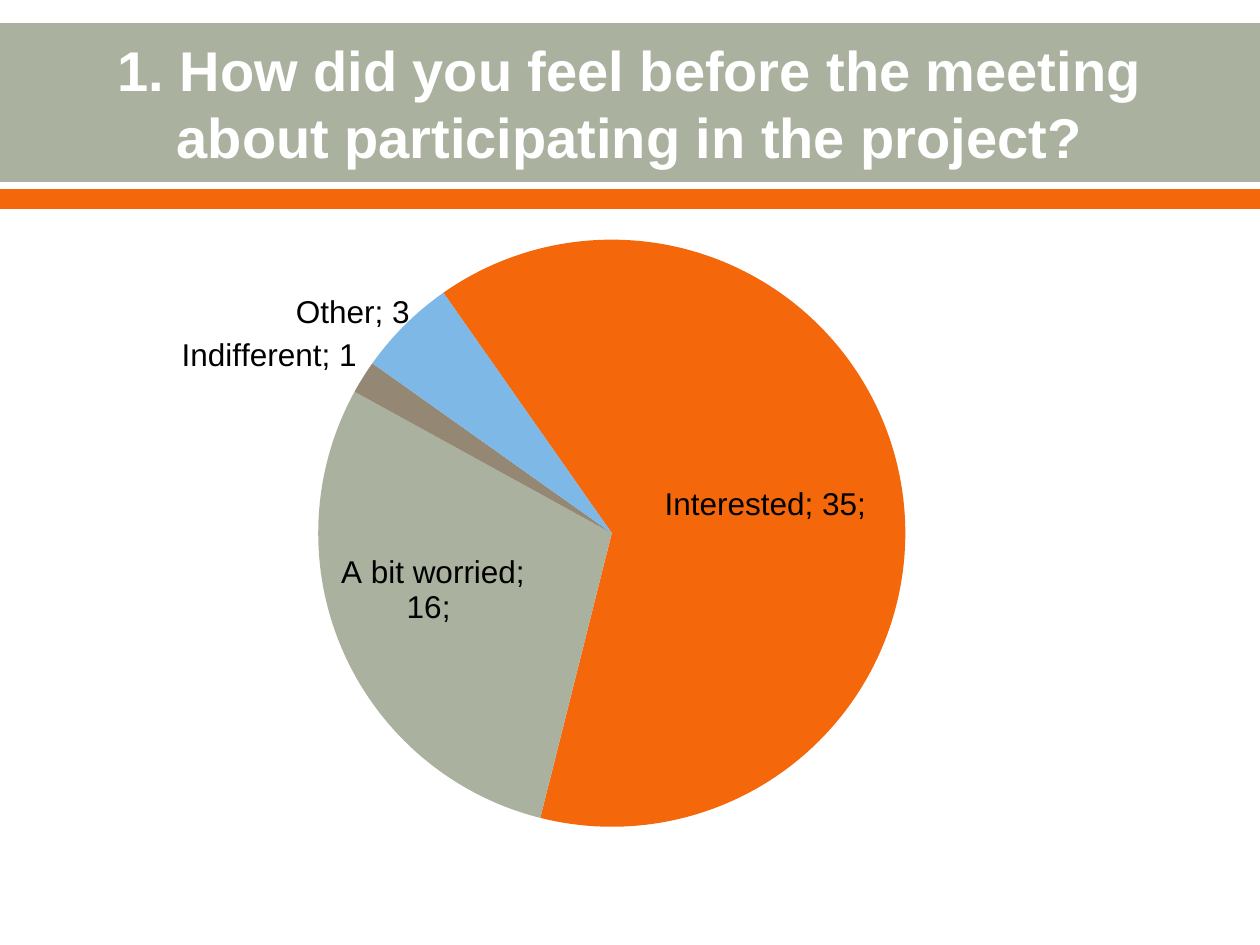
from lxml import etree
from pptx import Presentation
from pptx.chart.data import CategoryChartData
from pptx.dml.color import RGBColor
from pptx.enum.chart import XL_CHART_TYPE, XL_LABEL_POSITION
from pptx.enum.shapes import MSO_SHAPE
from pptx.enum.text import MSO_ANCHOR, PP_ALIGN
from pptx.oxml.ns import qn
from pptx.util import Emu, Pt

RECTANGLE = MSO_SHAPE.RECTANGLE
PIE = XL_CHART_TYPE.PIE
INSIDE, OUTSIDE = XL_LABEL_POSITION.CENTER, XL_LABEL_POSITION.OUTSIDE_END
CENTER, MIDDLE = PP_ALIGN.CENTER, MSO_ANCHOR.MIDDLE

PX = 914400 / 126
FONT = "Arial"
COLORS = {"sage": "ABB19F", "orange": "F4680B", "brown": "948774",
          "blue": "7EB8E7", "white": "FFFFFF", "black": "000000"}
TITLE = "1. How did you feel before the meeting about participating in the project?"
# category, answers, colour, label, label position, label shift in px
ANSWERS = [
    ("Interested", 35, "orange", "Interested; 35; ", INSIDE, (14, -2)),
    ("A bit worried", 16, "sage", "A bit worried; 16; ", INSIDE, (-44, -2)),
    ("Indifferent", 1, "brown", "Indifferent; 1", OUTSIDE, (0, 0)),
    ("Other", 3, "blue", "Other; 3", OUTSIDE, (10, 10)),
]


def emu(*lengths):
    return [Emu(round(length * PX)) for length in lengths]


def rgb(name):
    return RGBColor.from_string(COLORS[name])


def style_font(font, size, color, bold=False):
    font.name, font.size, font.bold = FONT, Pt(size), bold
    font.color.rgb = rgb(color)


def add_band(page, box, color):
    band = page.shapes.add_shape(RECTANGLE, *emu(*box))
    band.shadow.inherit = False
    band.fill.solid()
    band.fill.fore_color.rgb = rgb(color)
    band.line.fill.background()


def add_header(page, box):
    left, top, width, height = box
    add_band(page, (left, top, width, 159), "sage")
    add_band(page, (left, top + height - 20, width, 20), "orange")

    # Title, raised above the bands
    title = page.shapes.title
    page.shapes._spTree.append(title._element)
    title.left, title.top, title.width, title.height = emu(
        left + 63, top + 3, width - 126, 154)
    frame = title.text_frame
    frame.word_wrap = True
    frame.vertical_anchor = MIDDLE
    para = frame.paragraphs[0]
    para.alignment = CENTER
    span = para.add_run()
    span.text = TITLE
    style_font(span.font, 32, "white", bold=True)


def add_layout(parent, index, **settings):
    """Give a chart part a manual layout, in fractions of the chart."""
    for old in parent.findall(qn("c:layout")):
        parent.remove(old)
    layout = etree.Element(qn("c:layout"))
    manual = etree.SubElement(layout, qn("c:manualLayout"))
    for name, value in settings.items():
        etree.SubElement(manual, qn("c:" + name)).set("val", str(value))
    parent.insert(index, layout)


def add_answer_pie(page, box):
    width, height = box[2:]
    data = CategoryChartData()
    data.categories = [answer[0] for answer in ANSWERS]
    data.add_series("Series 1", [answer[1] for answer in ANSWERS])
    chart = page.shapes.add_chart(PIE, *emu(*box), data).chart
    chart.has_title = chart.has_legend = False
    style_font(chart.font, 18, "black")

    # Pie place and rotation
    plot = chart.plots[0]
    plot.vary_by_categories = True
    pie = plot._element
    etree.SubElement(pie, qn("c:firstSliceAng")).set("val", "325")
    add_layout(pie.getparent(), 0, layoutTarget="inner", xMode="edge",
               yMode="edge", x=0.225, y=0.03, w=0.518, h=0.941)

    # Slices and their labels
    series = plot.series[0]
    for index, (_, _, color, text, position, shift) in enumerate(ANSWERS):
        point = series.points[index]
        point.format.fill.solid()
        point.format.fill.fore_color.rgb = rgb(color)
        label = point.data_label
        span = label.text_frame.paragraphs[0].add_run()
        span.text = text
        style_font(span.font, 18, "black")
        label.position = position
        for flag in ("c:showCatName", "c:showPercent"):
            label._dLbl.find(qn(flag)).set("val", "1")
        if any(shift):
            add_layout(label._dLbl, 1, x=round(shift[0] / width, 3),
                       y=round(shift[1] / height, 3))

    # Label content for the whole series
    labels = series.data_labels
    labels.show_value = labels.show_percentage = True
    labels.show_category_name = True
    style_font(labels.font, 18, "black", bold=True)


def main():
    deck = Presentation()
    deck.slide_width, deck.slide_height = emu(1260, 945)
    page = deck.slides.add_slide(deck.slide_layouts[5])
    add_header(page, (0, 23, 1260, 186))
    add_answer_pie(page, (63, 221, 1134, 624))
    deck.save("out.pptx")


if __name__ == "__main__":
    main()
